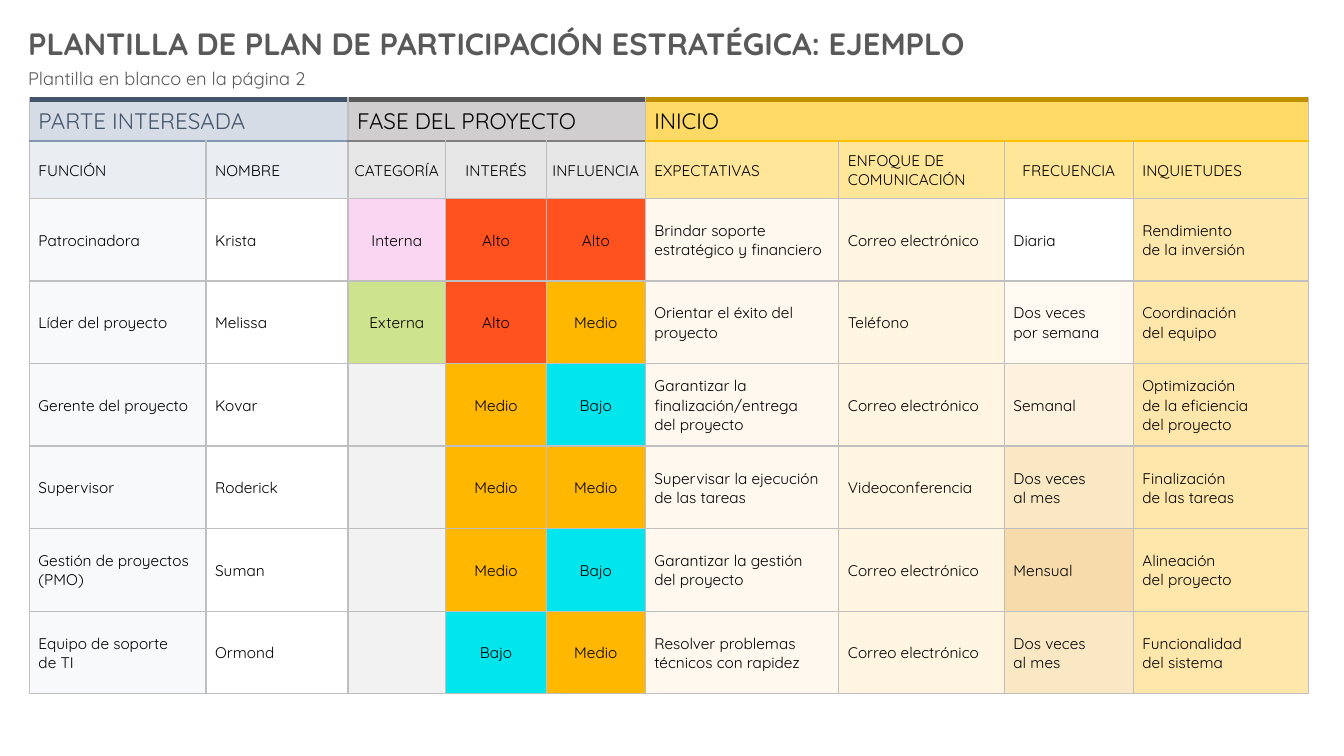
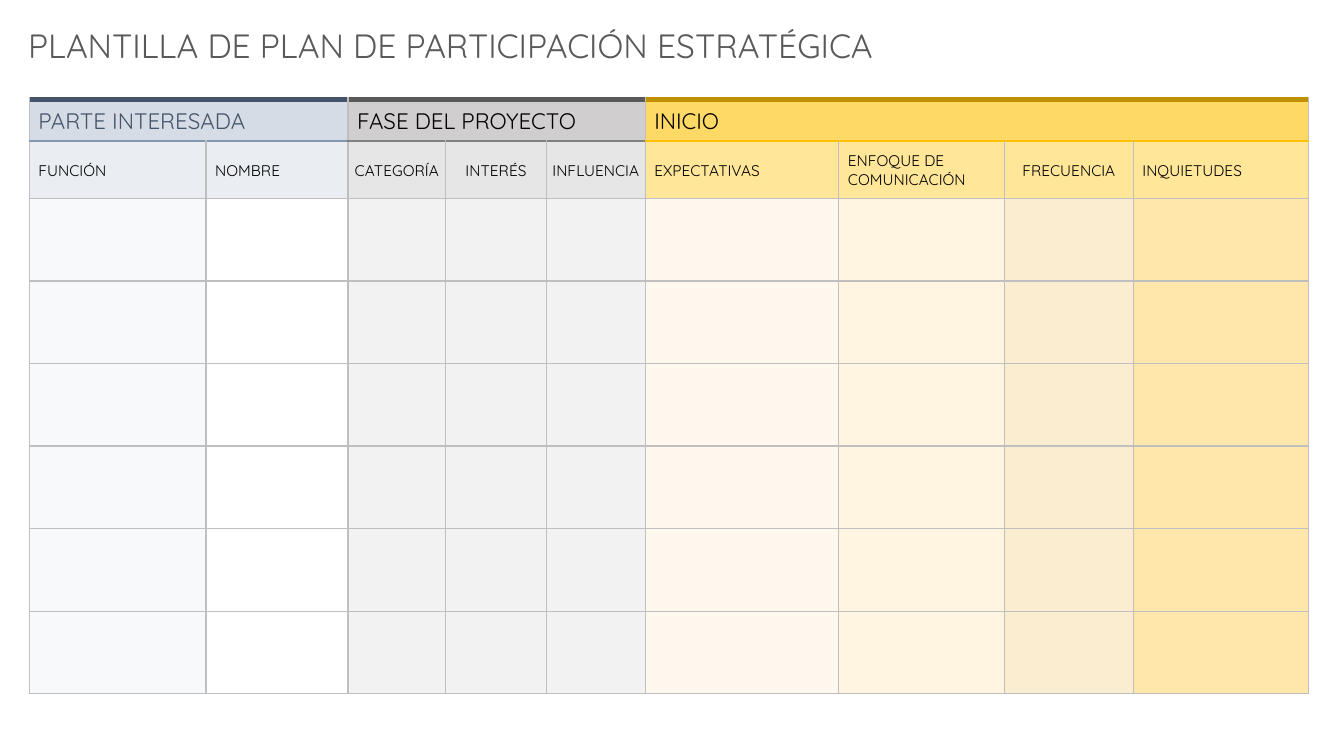
from collections import namedtuple
from copy import deepcopy

from lxml.etree import SubElement
from pptx import Presentation
from pptx.dml.color import RGBColor
from pptx.enum.text import MSO_ANCHOR, MSO_AUTO_SIZE, PP_ALIGN
from pptx.oxml.ns import qn
from pptx.util import Cm, Pt

Box = namedtuple("Box", "left top width height")
Group = namedtuple("Group", "title text_color top_color band_fill rule_color header_fill columns")
Column = namedtuple("Column", "title width fill header_centered body_centered")

FONT = "Quicksand"
BLACK = "000000"
TITLE_COLOR = "595959"
GRID = ("BFBFBF", 1)
BAND_HEIGHT, HEADER_HEIGHT, BODY_HEIGHT = 1.04, 1.45, 2.08
BODY_ROWS = 6

TITLE_BOX = Box(0.46, 0.5, 28.07, 1.2)
SUBTITLE_BOX = Box(0.46, 1.58, 11.76, 0.81)
TABLE_BOX = Box(0.74, 2.51, 32.24,
                BAND_HEIGHT + HEADER_HEIGHT + BODY_ROWS * BODY_HEIGHT)

GROUPS = [
    Group("PARTE INTERESADA", "44546A", "44546A", "D6DCE5", "8497B0", "EAEEF3", [
        Column("FUNCIÓN", 4.45, "F7F9FB", False, False),
        Column("NOMBRE", 3.58, "FFFFFF", False, False),
    ]),
    Group("FASE DEL PROYECTO", BLACK, "595959", "D0CECE", "808080", "E7E6E6", [
        Column("CATEGORÍA", 2.46, "F2F2F2", True, True),
        Column("INTERÉS", 2.54, "F2F2F2", True, True),
        Column("INFLUENCIA", 2.49, "F2F2F2", True, True),
    ]),
    Group("INICIO", BLACK, "BF9000", "FFD966", "FFC000", "FFE699", [
        Column("EXPECTATIVAS", 4.88, "FEF8EF", False, False),
        Column("ENFOQUE DE COMUNICACIÓN", 4.17, "FFF5E1", False, False),
        Column("FRECUENCIA", 3.25, "FBEDCF", True, False),
        Column("INQUIETUDES", 4.42, "FFE6AB", False, False),
    ]),
]
COLUMNS = [column for group in GROUPS for column in group.columns]

# Values that replace the fill of their column
VALUE_FILLS = {
    "Interna": "FAD6F3",
    "Externa": "CEE38D",
    "Alto": "FF521F",
    "Medio": "FFB700",
    "Bajo": "01E5EC",
    "Diaria": "FFFFFF",
    "Dos veces\npor semana": "FFF9F1",
    "Semanal": "FEF2DE",
    "Dos veces\nal mes": "F9E8C3",
    "Mensual": "F7DBAB",
}

EXAMPLE_ROWS = [
    ["Patrocinadora", "Krista", "Interna", "Alto", "Alto",
     "Brindar soporte estratégico y financiero", "Correo electrónico",
     "Diaria", "Rendimiento\nde la inversión"],
    ["Líder del proyecto", "Melissa", "Externa", "Alto", "Medio",
     "Orientar el éxito del proyecto", "Teléfono",
     "Dos veces\npor semana", "Coordinación\ndel equipo"],
    ["Gerente del proyecto", "Kovar", "", "Medio", "Bajo",
     "Garantizar la finalización/entrega\ndel proyecto", "Correo electrónico",
     "Semanal", "Optimización\nde la eficiencia\ndel proyecto"],
    ["Supervisor", "Roderick", "", "Medio", "Medio",
     "Supervisar la ejecución de las tareas", "Videoconferencia",
     "Dos veces\nal mes", "Finalización\nde las tareas"],
    ["Gestión de proyectos (PMO)", "Suman", "", "Medio", "Bajo",
     "Garantizar la gestión\ndel proyecto", "Correo electrónico",
     "Mensual", "Alineación\ndel proyecto"],
    ["Equipo de soporte\nde TI", "Ormond", "", "Bajo", "Medio",
     "Resolver problemas técnicos con rapidez", "Correo electrónico",
     "Dos veces\nal mes", "Funcionalidad\ndel sistema"],
]
BLANK_ROWS = [[""] * len(COLUMNS)] * BODY_ROWS


def rgb(value):
    return RGBColor.from_string(value)


def set_attributes(target, values):
    for name, value in values.items():
        setattr(target, name, value)


def write_text(frame, text, size, color=BLACK, bold=False, centered=False):
    para = frame.paragraphs[0]
    para.text = text
    para.alignment = PP_ALIGN.CENTER if centered else PP_ALIGN.LEFT
    for span in para.runs:
        set_attributes(span.font, {"name": FONT, "size": Pt(size), "bold": bold})
        span.font.color.rgb = rgb(color)
    for line_break in para._p.findall(qn("a:br")):
        line_break.insert(0, deepcopy(para.runs[0]._r.rPr))


def add_label(page, box, text, size, bold=False):
    frame = page.shapes.add_textbox(*map(Cm, box)).text_frame
    set_attributes(frame, {"word_wrap": True,
                           "auto_size": MSO_AUTO_SIZE.SHAPE_TO_FIT_TEXT})
    write_text(frame, text, size, TITLE_COLOR, bold)


def set_borders(cell, top, bottom):
    """Draw the four edges; top and bottom are (color, points) pairs."""
    properties = cell._tc.get_or_add_tcPr()
    edges = {"a:lnL": GRID, "a:lnR": GRID, "a:lnT": top, "a:lnB": bottom}
    for tag, (color, points) in edges.items():
        line = SubElement(properties, qn(tag), w=str(Pt(points)))
        solid = SubElement(line, qn("a:solidFill"))
        SubElement(solid, qn("a:srgbClr"), val=color)


def style_cell(cell, text, fill, size=11, color=BLACK, centered=False,
               top=GRID, bottom=GRID):
    set_borders(cell, top, bottom)
    cell.fill.solid()
    cell.fill.fore_color.rgb = rgb(fill)
    set_attributes(cell, {
        "vertical_anchor": MSO_ANCHOR.MIDDLE,
        "margin_left": Cm(0.03 if centered else 0.23),
        "margin_top": Cm(0.03),
        "margin_right": Cm(0.03),
        "margin_bottom": 0,
    })
    if text:
        write_text(cell.text_frame, text, size, color, centered=centered)


def fill_group_headings(table):
    """Write the merged bands and the column headings below them."""
    start = 0
    for group in GROUPS:
        end = start + len(group.columns) - 1
        rule = (group.rule_color, 2.25)
        table.cell(0, start).merge(table.cell(0, end))
        for index, column in enumerate(group.columns, start):
            style_cell(table.cell(0, index), group.title if index == start else "",
                       group.band_fill, 16, group.text_color,
                       top=(group.top_color, 4.5), bottom=rule)
            style_cell(table.cell(1, index), column.title, group.header_fill,
                       centered=column.header_centered, top=rule)
        start = end + 1


def add_plan_table(page, box, rows):
    table = page.shapes.add_table(len(rows) + 2, len(COLUMNS), *map(Cm, box)).table
    set_attributes(table, {"first_row": False, "horz_banding": False})
    for table_column, column in zip(table.columns, COLUMNS):
        table_column.width = Cm(column.width)
    heights = [BAND_HEIGHT, HEADER_HEIGHT] + [BODY_HEIGHT] * len(rows)
    for table_row, height in zip(table.rows, heights):
        table_row.height = Cm(height)
    fill_group_headings(table)
    for row_index, values in enumerate(rows, 2):
        for column_index, (text, column) in enumerate(zip(values, COLUMNS)):
            style_cell(table.cell(row_index, column_index), text,
                       VALUE_FILLS.get(text, column.fill),
                       centered=column.body_centered)


def add_plan_page(deck, title, title_size, rows, bold=False, subtitle=None):
    page = deck.slides.add_slide(deck.slide_layouts[6])
    add_label(page, TITLE_BOX, title, title_size, bold)
    add_plan_table(page, TABLE_BOX, rows)
    if subtitle:
        add_label(page, SUBTITLE_BOX, subtitle, 13)


def main():
    deck = Presentation()
    set_attributes(deck, {"slide_width": Cm(33.87), "slide_height": Cm(19.05)})
    title = "PLANTILLA DE PLAN DE PARTICIPACIÓN ESTRATÉGICA"
    add_plan_page(deck, f"{title}: EJEMPLO", 22, EXAMPLE_ROWS, bold=True,
                  subtitle="Plantilla en blanco en la página 2")
    add_plan_page(deck, title, 24, BLANK_ROWS)
    deck.save("out.pptx")


if __name__ == "__main__":
    main()
